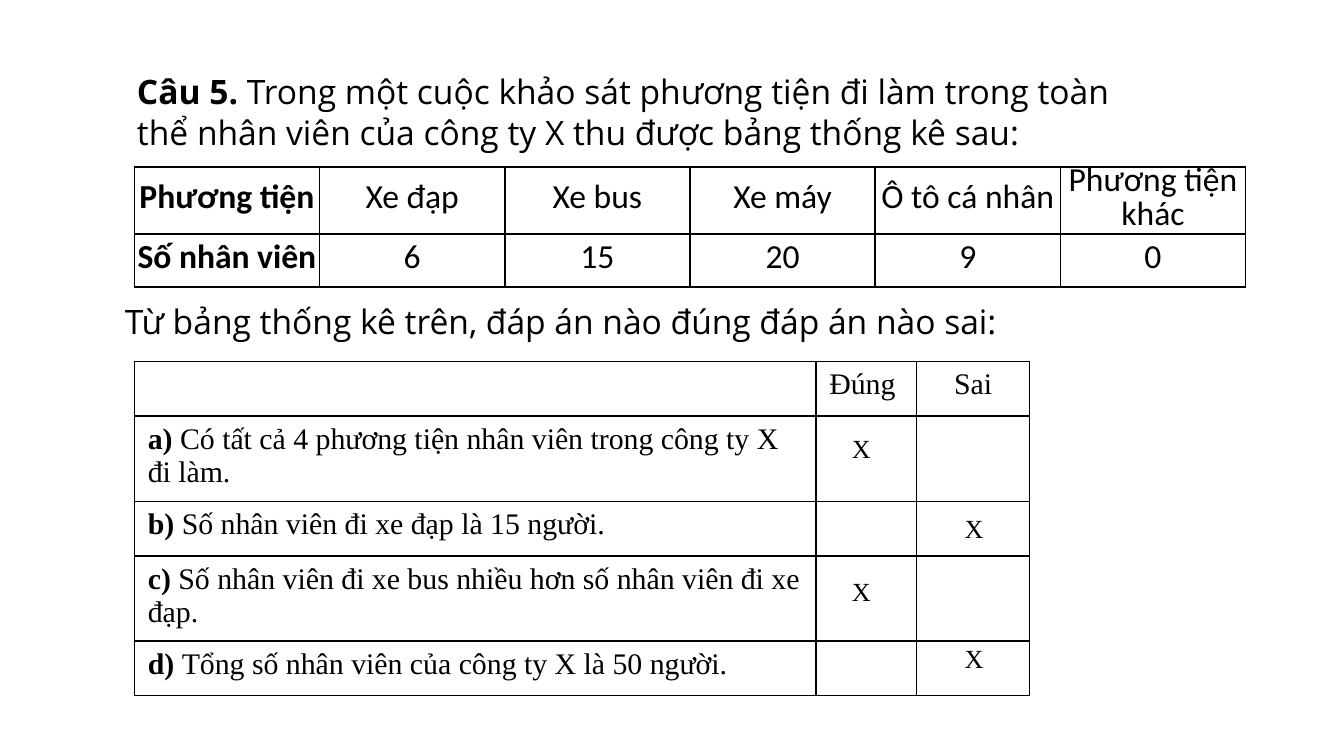
import pptx
import pptx.dml.color
import pptx.enum.text
import pptx.oxml
import pptx.oxml.ns
import pptx.util

Cm = pptx.util.Cm
Pt = pptx.util.Pt
Align = pptx.enum.text.PP_ALIGN
Anchor = pptx.enum.text.MSO_ANCHOR

COLORS = {"ink": "000000", "paper": "FFFFFF"}
HEADING_FONT = "Open Sans"
DATA_FONT = "Calibri"
ANSWER_FONT = "Times New Roman"


class SlideBuilder:
    def __init__(self, deck):
        self.page = deck.slides.add_slide(deck.slide_layouts[6])
        fill = self.page.background.fill
        fill.solid()
        fill.fore_color.rgb = self.color("paper")

    def color(self, name):
        return pptx.dml.color.RGBColor.from_string(COLORS[name])

    def fill_text(self, frame, text, font, size, lead="", bold=False, align=Align.LEFT, spacing=None):
        para = frame.paragraphs[0]
        para.text = lead or text
        if lead:
            para.add_run().text = text
        para.alignment = align
        if spacing:
            para.line_spacing = Pt(spacing)
        for index, span in enumerate(para.runs):
            span.font.name = font
            span.font.size = Pt(size)
            span.font.bold = bold or bool(lead and index == 0)
            span.font.color.rgb = self.color("ink")

    def text(self, left, top, width, height, text, font, size, **style):
        box = self.page.shapes.add_textbox(Cm(left), Cm(top), Cm(width), Cm(height))
        box.text_frame.word_wrap = True
        box.text_frame.auto_size = pptx.enum.text.MSO_AUTO_SIZE.SHAPE_TO_FIT_TEXT
        self.fill_text(box.text_frame, text, font, size, **style)

    def table(self, left, top, widths, heights):
        frame = self.page.shapes.add_table(
            len(heights), len(widths), Cm(left), Cm(top), Cm(sum(widths)), Cm(sum(heights))
        )
        table = frame.table
        table.first_row = False
        table.horz_banding = False
        for column, width in zip(table.columns, widths):
            column.width = Cm(width)
        for row, height in zip(table.rows, heights):
            row.height = Cm(height)
        for cell in table.iter_cells():
            self.outline(cell)
            cell.fill.background()
        return table

    def outline(self, cell):
        properties = cell._tc.get_or_add_tcPr()
        for side in ("lnL", "lnR", "lnT", "lnB"):
            properties.append(pptx.oxml.parse_xml(
                f'<a:{side} {pptx.oxml.ns.nsdecls("a")} w="{Pt(1)}"><a:solidFill>'
                f'<a:srgbClr val="{COLORS["ink"]}"/></a:solidFill></a:{side}>'
            ))

    def data_table(self, left, top, column_width, heights, rows):
        table = self.table(left, top, [column_width] * len(rows[0]), heights)
        for row, values in enumerate(rows):
            for column, value in enumerate(values):
                cell = table.cell(row, column)
                cell.margin_left = cell.margin_right = 0
                cell.margin_top = cell.margin_bottom = 0
                cell.vertical_anchor = Anchor.MIDDLE
                self.fill_text(cell.text_frame, value, DATA_FONT, 18, bold=column == 0,
                               align=Align.CENTER, spacing=18)

    def answer_table(self, left, top, widths, heights, headings, statements):
        table = self.table(left, top, widths, heights)
        for column, heading in enumerate(headings, 1):
            self.fill_text(table.cell(0, column).text_frame, heading, ANSWER_FONT, 16,
                           align=Align.CENTER)
        for row, (letter, statement) in enumerate(statements, 1):
            self.fill_text(table.cell(row, 0).text_frame, statement, ANSWER_FONT, 16,
                           lead=f"{letter}) ")


def main():
    deck = pptx.Presentation()
    deck.slide_width = Cm(25.4)
    deck.slide_height = Cm(14.28)
    builder = SlideBuilder(deck)

    builder.text(2.34, 1.22, 19.48, 1.8,
                 "Trong một cuộc khảo sát phương tiện đi làm trong toàn thể nhân viên "
                 "của công ty X thu được bảng thống kê sau:",
                 HEADING_FONT, 18, lead="Câu 5. ")
    builder.data_table(2.54, 3.15, 3.5, [1.27, 1], [
        ["Phương tiện", "Xe đạp", "Xe bus", "Xe máy", "Ô tô cá nhân", "Phương tiện khác"],
        ["Số nhân viên", "6", "15", "20", "9", "0"],
    ])
    builder.text(2.11, 5.69, 20.32, 0.91,
                 "Từ bảng thống kê trên, đáp án nào đúng đáp án nào sai:",
                 HEADING_FONT, 18, align=Align.JUSTIFY, spacing=18)
    builder.answer_table(
        2.54, 6.83, [12.88, 1.9, 2.14], [1.03, 1.61, 1.03, 1.61, 1.03],
        ["Đúng ", "Sai"],
        [
            ("a", "Có tất cả 4 phương tiện nhân viên trong công ty X đi làm."),
            ("b", "Số nhân viên đi xe đạp là 15 người."),
            ("c", "Số nhân viên đi xe bus nhiều hơn số nhân viên đi xe đạp."),
            ("d", "Tổng số nhân viên của công ty X là 50 người."),
        ],
    )
    true_left, false_left = 15.85, 17.98
    for left, top in ((true_left, 8.05), (false_left, 9.55), (true_left, 10.74), (false_left, 12.01)):
        builder.text(left, top, 0.84, 0.86, "X", ANSWER_FONT, 14)

    deck.save("out.pptx")


if __name__ == "__main__":
    main()
